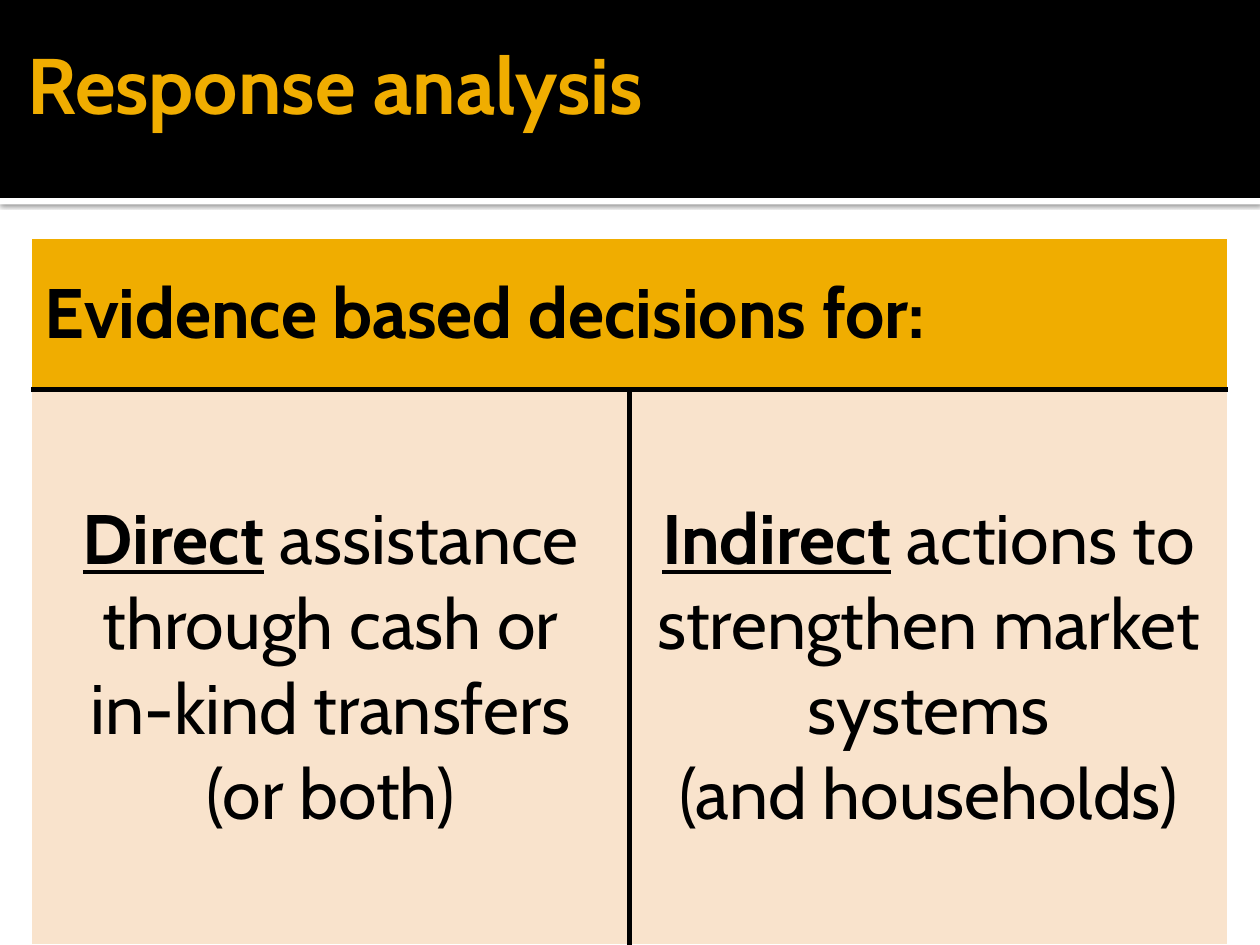
from lxml import etree
from pptx import Presentation
from pptx import util as u
from pptx.dml.color import RGBColor
from pptx.enum import shapes, text
from pptx.oxml import ns

BLACK = RGBColor(0x00, 0x00, 0x00)
WHITE = RGBColor(0xFF, 0xFF, 0xFF)
AMBER = RGBColor(0xF0, 0xAD, 0x00)
PEACH = RGBColor(0xF9, 0xE3, 0xCC)
FONT = "Cabin"


def style_span(span, size, color, bold, underline=False):
    span.font.name = FONT
    span.font.size = u.Pt(size)
    span.font.color.rgb = color
    span.font.bold = bold
    span.font.underline = underline


def set_borders(cell, **colors_and_widths):
    """Draw the cell's L, R, T and B borders; they precede the fill in tcPr."""
    properties = cell._tc.get_or_add_tcPr()
    for position, side in enumerate("LRTB"):
        color, width = colors_and_widths.get(side, (WHITE, 1))
        line = etree.Element(ns.qn(f"a:ln{side}"), w=str(u.Pt(width)))
        fill = etree.SubElement(line, ns.qn("a:solidFill"))
        etree.SubElement(fill, ns.qn("a:srgbClr"), val=str(color))
        properties.insert(position, line)


deck = Presentation()
deck.slide_width = u.Cm(25.4)
deck.slide_height = u.Cm(19.05)
page = deck.slides.add_slide(deck.slide_layouts[6])

# White strip with a soft shadow, then the black header band
for top, height, color in ((3.99, 0.13, WHITE), (0, 3.99, BLACK)):
    band = page.shapes.add_shape(
        shapes.MSO_SHAPE.RECTANGLE, 0, u.Cm(top), deck.slide_width, u.Cm(height))
    band.shadow.inherit = False
    band.fill.solid()
    band.fill.fore_color.rgb = color
    band.line.fill.background()
    if color == WHITE:
        effects = band._element.spPr.find(ns.qn("a:effectLst"))
        shadow = etree.SubElement(
            effects, ns.qn("a:outerShdw"), blurRad=str(u.Pt(2.5)),
            dist=str(u.Pt(0.8)), dir="5400000", algn="tl", rotWithShape="0")
        shade = etree.SubElement(shadow, ns.qn("a:srgbClr"), val=str(BLACK))
        etree.SubElement(shade, ns.qn("a:alpha"), val="60000")

# Title
box = page.shapes.add_textbox(u.Cm(0.3), u.Cm(0.08), u.Cm(24.77), u.Cm(3.18))
frame = box.text_frame
frame.word_wrap = True
frame.vertical_anchor = text.MSO_ANCHOR.MIDDLE
frame.margin_left = u.Cm(0.25)
frame.margin_right = frame.margin_top = frame.margin_bottom = u.Cm(0.13)
frame.text = "Response analysis"
style_span(frame.paragraphs[0].runs[0], 45, AMBER, True)

# Table: a heading across two equal columns
table = page.shapes.add_table(
    2, 2, u.Cm(0.64), u.Cm(4.8), u.Cm(24.1), u.Cm(14.25)).table
for column in table.columns:
    column.width = u.Cm(12.05)
table.rows[0].height = u.Cm(3.05)
table.rows[1].height = u.Cm(11.2)
for row, color in enumerate((AMBER, PEACH)):
    for cell in table.rows[row].cells:
        cell.fill.solid()
        cell.fill.fore_color.rgb = color
        cell.vertical_anchor = text.MSO_ANCHOR.MIDDLE

# Black rules under the heading and between the columns
rule = (BLACK, 3)
for column in range(2):
    set_borders(table.cell(0, column), B=rule)
set_borders(table.cell(1, 0), T=rule, R=rule)
set_borders(table.cell(1, 1), T=rule, L=rule)

# Heading text
heading = table.cell(0, 0)
heading.merge(table.cell(0, 1))
heading.text_frame.text = "Evidence based decisions for:"
style_span(heading.text_frame.paragraphs[0].runs[0], 40, BLACK, True)

# Column text: an underlined key word opens the first paragraph
columns = (
    ("Direct", (" assistance through cash or", "in-kind transfers", "(or both)")),
    ("Indirect", (" actions to strengthen market systems", "(and households)")),
)
for column, (key_word, lines) in enumerate(columns):
    frame = table.cell(1, column).text_frame
    frame.text = "\n".join((key_word,) + lines[1:])
    frame.paragraphs[0].add_run().text = lines[0]
    for para in frame.paragraphs:
        para.alignment = text.PP_ALIGN.CENTER
        for span in para.runs:
            is_key = span.text == key_word
            style_span(span, 40, BLACK, is_key, is_key)

deck.save("out.pptx")
